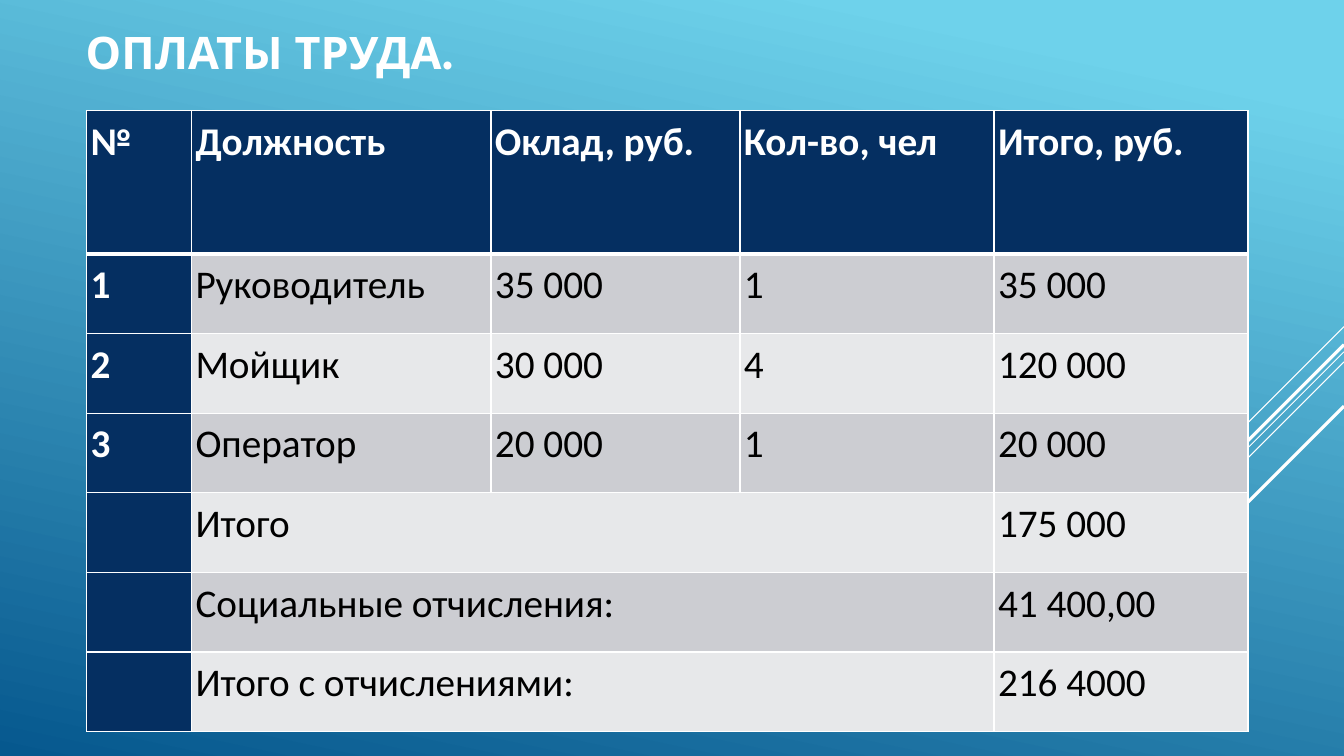
from dataclasses import dataclass

from lxml import etree
from pptx import Presentation
from pptx import util as u
from pptx.dml.color import RGBColor
from pptx.enum import shapes, text
from pptx.oxml import ns

# Content
TITLE = "ОПЛАТЫ ТРУДА."
PAYROLL = [
    ("№", "Должность", "Оклад, руб.", "Кол-во, чел", "Итого, руб."),
    ("1", "Руководитель", "35 000", "1", "35 000"),
    ("2", "Мойщик", "30 000", "4", "120 000"),
    ("3", "Оператор", "20 000", "1", "20 000"),
    ("", "Итого", "", "", "175 000"),
    ("", "Социальные отчисления:", "", "", "41 400,00"),
    ("", "Итого с отчислениями:", "", "", "216 4000"),
]
FIRST_TOTAL = 4

# Layout in inches
WIDTH, HEIGHT = 13.33, 7.5
TITLE_BOX = (0.75, 0.19, 11, 0.85)
TABLE_LEFT, TABLE_TOP = 0.86, 1.1
COLUMNS = (1.04, 2.97, 2.47, 2.52, 2.52)
ROWS = (1.42,) + (0.79,) * (len(PAYROLL) - 1)
INSET = 0.04
# Diagonal rays: height at the right edge, run to the left, weight in points
RAYS = [(3.24, 1, 0.75), (3.49, 3.26, 0.75), (3.59, 2.07, 0.75),
        (3.42, 1.91, 2.25), (4.03, 1.39, 2.25)]


@dataclass(frozen=True)
class Theme:
    sky: str = "6ED2EB"
    deep: str = "06588E"
    navy: str = "052F61"
    odd_band: str = "CCCDD2"
    even_band: str = "E7E8EA"
    white: str = "FFFFFF"
    black: str = "000000"
    title_font: str = "League Spartan"
    body_font: str = "Calibri"
    title_size: int = 32
    body_size: int = 28
    thin: int = 1
    thick: int = 3


theme = Theme()


def rgb(value):
    return RGBColor.from_string(value)


def set_font(paragraph, name, size, color, bold):
    font = paragraph.font
    font.name, font.size, font.bold = name, u.Pt(size), bold
    font.color.rgb = rgb(color)


def set_borders(cell, weights):
    """Draw white borders; weights follow left, right, top, bottom."""
    props = cell._tc.get_or_add_tcPr()
    for index, (tag, weight) in enumerate(zip(("lnL", "lnR", "lnT", "lnB"), weights)):
        line = etree.Element(ns.qn("a:" + tag), w=str(u.Pt(weight)))
        fill = etree.SubElement(line, ns.qn("a:solidFill"))
        etree.SubElement(fill, ns.qn("a:srgbClr"), val=theme.white)
        props.insert(index, line)


def paint_background(slide):
    fill = slide.background.fill
    fill.gradient()
    fill.gradient_angle = 360 - 102
    stops = ((0.1, theme.sky), (1, theme.deep))
    for stop, (position, color) in zip(fill.gradient_stops, stops):
        stop.position = position
        stop.color.rgb = rgb(color)


def add_rays(slide):
    for top, run, weight in RAYS:
        ray = slide.shapes.add_connector(
            shapes.MSO_CONNECTOR.STRAIGHT, u.Inches(WIDTH), u.Inches(top),
            u.Inches(WIDTH - run), u.Inches(top + run))
        ray.line.color.rgb = rgb(theme.white)
        ray.line.width = u.Pt(weight)
        etree.SubElement(ray._element.spPr, ns.qn("a:effectLst"))


def format_title(slide):
    title = slide.shapes.title
    title.left, title.top, title.width, title.height = map(u.Inches, TITLE_BOX)
    frame = title.text_frame
    frame.text = TITLE
    frame.vertical_anchor = text.MSO_ANCHOR.TOP
    heading = frame.paragraphs[0]
    heading.alignment = text.PP_ALIGN.LEFT
    set_font(heading, theme.title_font, theme.title_size, theme.white, True)


def format_cell(cell, row, column):
    heading = row == 0 or column == 0
    band = theme.odd_band if row % 2 else theme.even_band
    cell.fill.solid()
    cell.fill.fore_color.rgb = rgb(theme.navy if heading else band)
    set_borders(cell, (theme.thin, theme.thin,
                       theme.thick if row == 1 else theme.thin,
                       theme.thick if row == 0 else theme.thin))
    cell.margin_left = cell.margin_right = u.Inches(INSET)
    cell.margin_top = cell.margin_bottom = u.Inches(INSET)
    entry = cell.text_frame.paragraphs[0]
    entry.line_spacing, entry.space_after = 1.07, u.Pt(8)
    justified = column and (row == 0 or column == 1 or row >= FIRST_TOTAL)
    entry.alignment = text.PP_ALIGN.JUSTIFY if justified else text.PP_ALIGN.LEFT
    set_font(entry, theme.body_font, theme.body_size,
             theme.white if heading else theme.black, heading)


def add_payroll(slide):
    payroll = slide.shapes.add_table(
        len(ROWS), len(COLUMNS), u.Inches(TABLE_LEFT), u.Inches(TABLE_TOP),
        u.Inches(sum(COLUMNS)), u.Inches(sum(ROWS))).table
    for column, width in zip(payroll.columns, COLUMNS):
        column.width = u.Inches(width)
    for row, height in zip(payroll.rows, ROWS):
        row.height = u.Inches(height)
    for r, entries in enumerate(PAYROLL):
        for c, entry in enumerate(entries):
            cell = payroll.cell(r, c)
            cell.text = entry
            format_cell(cell, r, c)
        # Totals span the middle columns
        if r >= FIRST_TOTAL:
            payroll.cell(r, 1).merge(payroll.cell(r, 3))


def main():
    deck = Presentation()
    deck.slide_width, deck.slide_height = u.Inches(WIDTH), u.Inches(HEIGHT)
    slide = deck.slides.add_slide(deck.slide_layouts[5])
    paint_background(slide)
    add_rays(slide)
    format_title(slide)
    add_payroll(slide)
    deck.save("out.pptx")


if __name__ == "__main__":
    main()
